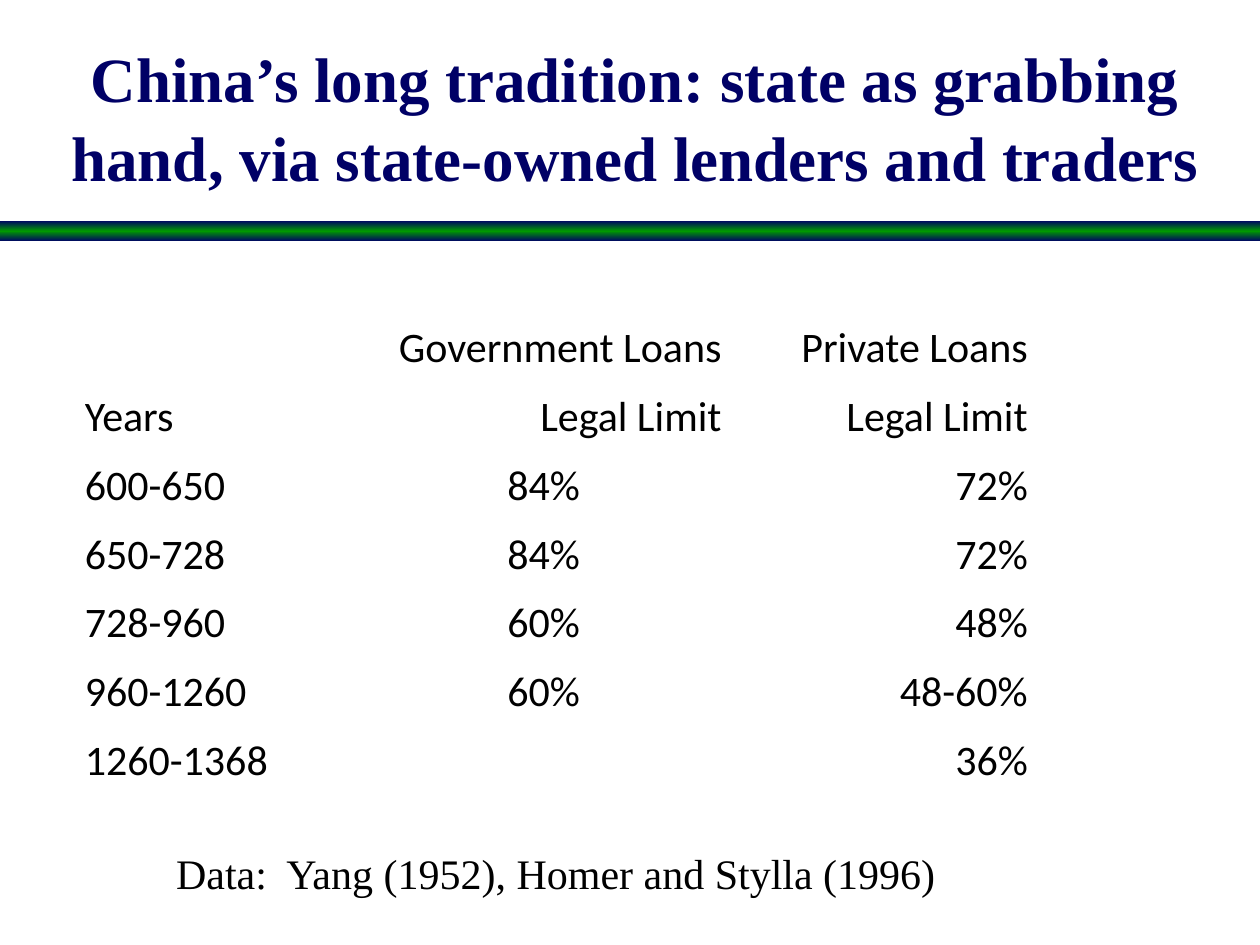
from copy import deepcopy

from pptx import Presentation
from pptx.dml.color import RGBColor
from pptx.enum.shapes import MSO_SHAPE
from pptx.enum.text import MSO_ANCHOR, PP_ALIGN
from pptx.util import Cm, Pt

LEFT, CENTER, RIGHT = PP_ALIGN.LEFT, PP_ALIGN.CENTER, PP_ALIGN.RIGHT
MIDDLE, BOTTOM = MSO_ANCHOR.MIDDLE, MSO_ANCHOR.BOTTOM
RECTANGLE = MSO_SHAPE.RECTANGLE

NAVY = RGBColor(0x00, 0x00, 0x66)
GREEN = RGBColor(0x00, 0x99, 0x00)
BLACK = RGBColor(0x00, 0x00, 0x00)
WHITE = RGBColor(0xFF, 0xFF, 0xFF)
SERIF, SANS = "Times New Roman", "Calibri"
TITLE_ONLY = 5

LOAN_LIMITS = [
    ("", "Government Loans", "Private Loans"),
    ("Years", "Legal Limit", "Legal Limit"),
    ("600-650", "84%", "72%"),
    ("650-728", "84%", "72%"),
    ("728-960", "60%", "48%"),
    ("960-1260", "60%", "48-60%"),
    ("1260-1368", "", "36%"),
]
HEADER_ROWS = 2
COLUMN_SHARES = (2.23, 2.84, 2.43)


def write_text(text_frame, text, font=SERIF, size=24, color=BLACK, bold=False,
               align=LEFT, line_spacing=1.0):
    text_frame.word_wrap = True
    paragraph = text_frame.paragraphs[0]
    paragraph.text = text
    paragraph.alignment = align
    paragraph.line_spacing = line_spacing
    paragraph.font.name = font
    paragraph.font.size = Pt(size)
    paragraph.font.bold = bold
    paragraph.font.color.rgb = color


def add_divider(slide, left, top, width, height):
    """Draw a bar that fades from navy to green and back."""
    bar = slide.shapes.add_shape(RECTANGLE, left, top, width, height)
    bar.shadow.inherit = False
    bar.line.fill.background()
    bar.fill.gradient()
    bar.fill.gradient_angle = 90
    first_stop = bar.fill.gradient_stops[0]._gs
    first_stop.addnext(deepcopy(first_stop))
    stops = zip(bar.fill.gradient_stops, (0, 0.5, 1), (NAVY, GREEN, NAVY))
    for stop, position, color in stops:
        stop.position = position
        stop.color.rgb = color


def format_title(slide, left, top, width, height):
    title = slide.shapes.title
    title.left, title.top, title.width, title.height = left, top, width, height
    title.fill.solid()
    title.fill.fore_color.rgb = WHITE
    text_frame = title.text_frame
    text_frame.vertical_anchor = MIDDLE
    text_frame.margin_top = Cm(0.33)
    write_text(text_frame,
               "China’s long tradition: state as grabbing hand, "
               "via state-owned lenders and traders",
               size=36, color=NAVY, bold=True, align=CENTER, line_spacing=1.05)


def cell_alignment(row, column):
    if column == 0:
        return LEFT
    if column == 1 and row >= HEADER_ROWS:
        return CENTER
    return RIGHT


def add_loan_table(slide, left, top, width, height):
    rows, columns = len(LOAN_LIMITS), len(COLUMN_SHARES)
    table = slide.shapes.add_table(rows, columns, left, top, width, height).table
    table.first_row = table.horz_banding = False
    for column, share in zip(table.columns, COLUMN_SHARES):
        column.width = int(width * share / sum(COLUMN_SHARES))
    for row, values in enumerate(LOAN_LIMITS):
        for column, value in enumerate(values):
            cell = table.cell(row, column)
            cell.fill.solid()
            cell.fill.fore_color.rgb = WHITE
            cell.vertical_anchor = BOTTOM
            cell.margin_left = cell.margin_right = cell.margin_top = Cm(0.02)
            cell.margin_bottom = 0
            write_text(cell.text_frame, value, font=SANS,
                       align=cell_alignment(row, column))
    table.cell(rows - 1, 0).merge(table.cell(rows - 1, 1))


def add_data_note(slide, left, top, width, height):
    note = slide.shapes.add_textbox(left, top, width, height)
    write_text(note.text_frame, "Data:  Yang (1952), Homer and Stylla (1996)")


def main():
    presentation = Presentation()
    presentation.slide_width, presentation.slide_height = Cm(25.4), Cm(19.05)
    slide = presentation.slides.add_slide(presentation.slide_layouts[TITLE_ONLY])
    add_divider(slide, 0, Cm(4.45), presentation.slide_width, Cm(0.42))
    format_title(slide, Cm(0.2), Cm(0.2), Cm(25.2), Cm(4.02))
    add_loan_table(slide, Cm(1.69), Cm(6.14), Cm(19.05), Cm(9.73))
    add_data_note(slide, Cm(3.3), Cm(16.97), Cm(21.41), Cm(1.02))
    presentation.save("out.pptx")


if __name__ == "__main__":
    main()
